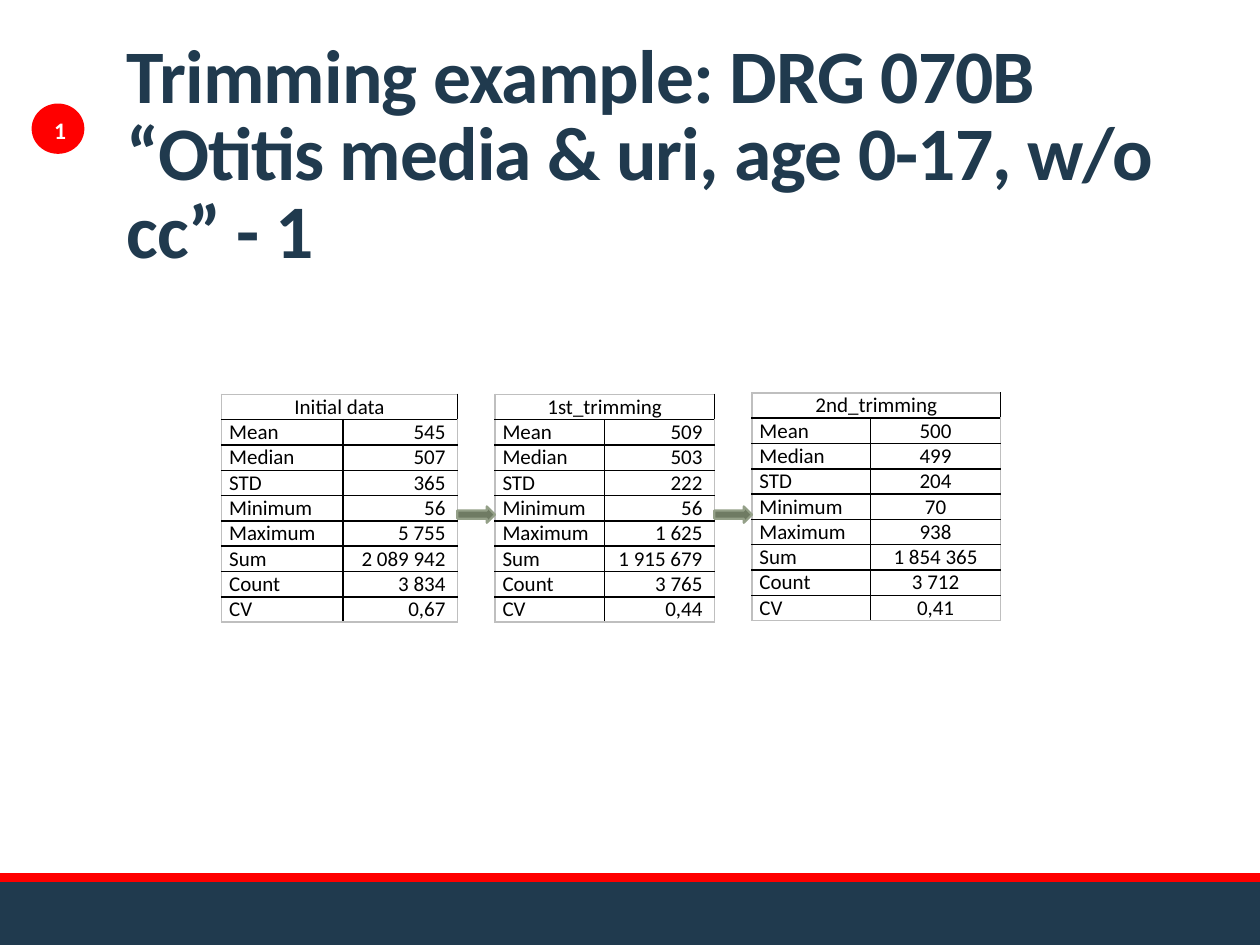
from lxml.etree import SubElement
from pptx import Presentation
from pptx.dml.color import RGBColor
from pptx.enum.shapes import MSO_SHAPE
from pptx.enum.text import MSO_ANCHOR, PP_ALIGN
from pptx.oxml.ns import qn
from pptx.util import Cm, Pt

NAVY = RGBColor(0x20, 0x3A, 0x4E)
RED = RGBColor(0xFF, 0, 0)
WHITE = RGBColor(0xFF, 0xFF, 0xFF)
BLACK = RGBColor(0, 0, 0)
GRAY = RGBColor(0xBF, 0xBF, 0xBF)
OLIVE = RGBColor(0x6F, 0x7B, 0x63)
SAGE = RGBColor(0x94, 0xA0, 0x88)

deck = Presentation()
deck.slide_width, deck.slide_height = Cm(25.4), Cm(19.05)
slide = deck.slides.add_slide(deck.slide_layouts[6])


def add_form(kind, box, fill, line=None):
    form = slide.shapes.add_shape(kind, *map(Cm, box))
    form.shadow.inherit = False
    form.fill.solid()
    form.fill.fore_color.rgb = fill
    if line is None:
        form.line.fill.background()
    else:
        form.line.color.rgb = line
        form.line.width = Pt(1.25)


def add_run(para, text, size, color, bold=False):
    run = para.add_run()
    run.text = text
    run.font.name = "Calibri"
    run.font.size = Pt(size)
    run.font.bold = bold
    run.font.color.rgb = color
    return run


# Footer bands
add_form(MSO_SHAPE.RECTANGLE, (0, 17.78, 25.4, 1.27), NAVY)
add_form(MSO_SHAPE.RECTANGLE, (0, 17.6, 25.4, 0.18), RED)

# Title
frame = slide.shapes.add_textbox(Cm(2.31), Cm(1.6), Cm(24.31 - 2.31), Cm(4.04)).text_frame
frame.word_wrap = True
frame.vertical_anchor = MSO_ANCHOR.BOTTOM
para = frame.paragraphs[0]
para.line_spacing = 0.85
title = "Trimming example: DRG 070B “Otitis media & uri, age 0-17, w/o cc” - 1"
run = add_run(para, title, 43.2, NAVY, True)
run.font._element.set("spc", "-50")

# Statistics tables
LABELS = ["Mean", "Median", "STD", "Minimum", "Maximum", "Sum", "Count", "CV"]
TABLES = [
    ("Initial data", 4.47, 7.95, (2.44, 2.31), PP_ALIGN.RIGHT,
     ["545", "507", "365", "56", "5 755", "2 089 942", "3 834", "0,67"]),
    ("1st_trimming", 9.98, 7.95, (2.21, 2.21), PP_ALIGN.RIGHT,
     ["509", "503", "222", "56", "1 625", "1 915 679", "3 765", "0,44"]),
    ("2nd_trimming", 15.16, 7.92, (2.39, 2.62), PP_ALIGN.CENTER,
     ["500", "499", "204", "70", "938", "1 854 365", "3 712", "0,41"]),
]
ROW = 0.51
for head, left, top, widths, align, values in TABLES:
    rows = [(head, "")] + list(zip(LABELS, values))
    last = len(rows) - 1
    table = slide.shapes.add_table(len(rows), 2, Cm(left), Cm(top),
                                   Cm(sum(widths)), Cm(ROW * len(rows))).table
    for col, width in zip(table.columns, widths):
        col.width = Cm(width)
    table.cell(0, 0).merge(table.cell(0, 1))
    for r, texts in enumerate(rows):
        table.rows[r].height = Cm(ROW)
        for c, text in enumerate(texts):
            cell = table.cell(r, c)
            cell.margin_top = cell.margin_bottom = 0
            cell.margin_left = Cm(0.15)
            flush = c == 1 and align == PP_ALIGN.RIGHT
            cell.margin_right = Cm(0.24 if flush else 0.15)
            outer = {"lnL": c == 0, "lnR": c == 1, "lnT": r == 0, "lnB": r == last}
            for side, edge in outer.items():
                line = SubElement(cell._tc.get_or_add_tcPr(), qn("a:" + side), w="12700")
                paint = SubElement(line, qn("a:solidFill"))
                SubElement(paint, qn("a:srgbClr"), val=str(GRAY if edge else BLACK))
            cell.fill.background()
            para = cell.text_frame.paragraphs[0]
            para.font.size = Pt(12)
            if r == 0:
                para.alignment = PP_ALIGN.CENTER
            elif c == 1:
                para.alignment = align
            if text:
                add_run(para, text, 12, BLACK)

# Arrows between the tables
for left in (9.22, 14.4):
    add_form(MSO_SHAPE.RIGHT_ARROW, (left, 10.21, 0.76, 0.33), OLIVE, SAGE)

# Number badge
add_form(MSO_SHAPE.OVAL, (0.66, 2.11, 1.02, 0.97), RED, RED)
frame = slide.shapes.add_textbox(Cm(0.84), Cm(2.21), Cm(0.76), Cm(0.84)).text_frame
frame.word_wrap = False
add_run(frame.paragraphs[0], "1", 13.5, WHITE, True)

deck.save("out.pptx")
